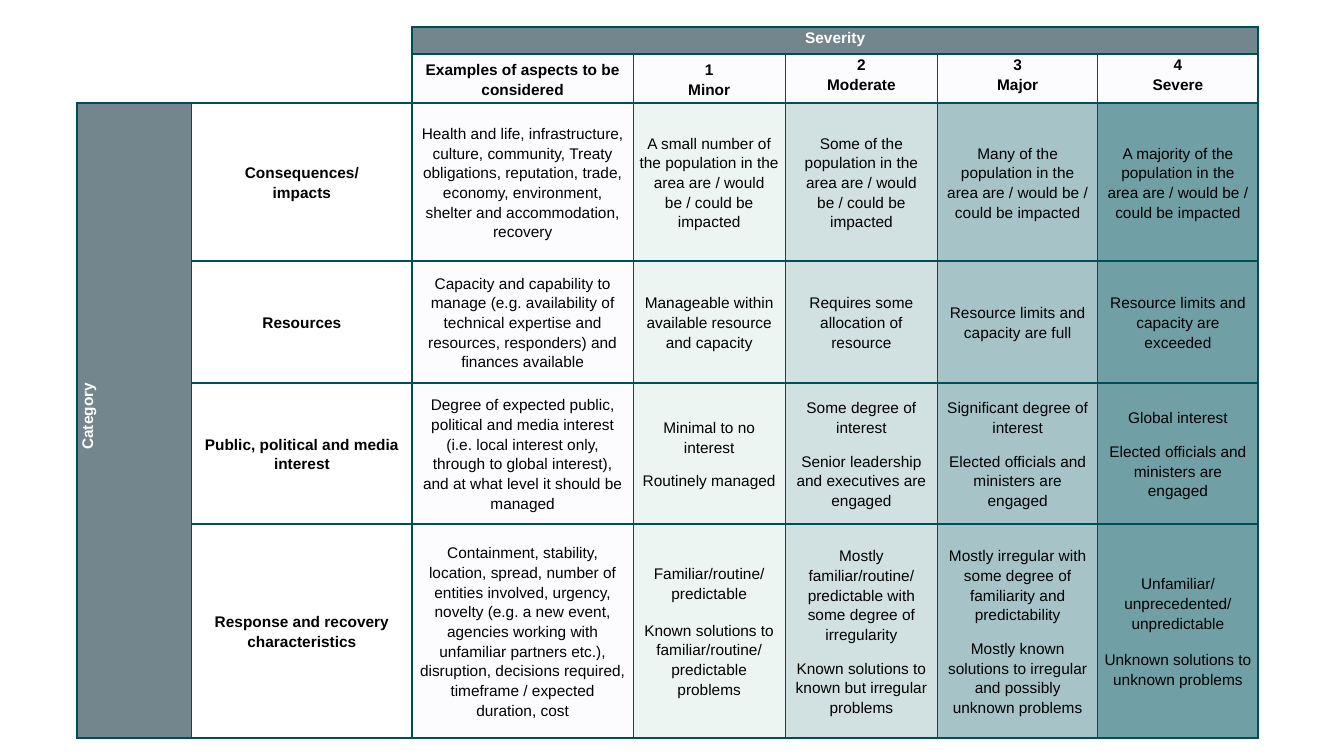
from lxml.etree import SubElement
from pptx import Presentation
from pptx.dml.color import RGBColor
from pptx.enum.text import MSO_ANCHOR as Anchor, PP_ALIGN as Align
from pptx.oxml.ns import qn
from pptx.util import Inches, Pt

BLACK, WHITE, TEAL, SLATE, PALE = "000000", "FFFFFF", "004F58", "73868E", "FCFCFF"
COLUMN_FILLS = [SLATE, WHITE, PALE, "EDF5F2", "D1E0E0", "A6C4C7", "70A0A5"]
COLUMN_WIDTHS = [1.14, 2.19, 2.19, 1.51, 1.51, 1.59, 1.59]
ROW_HEIGHTS = [0.27, 0.48, 1.57, 1.21, 1.4, 2.12]

# Edges drawn with the heavier rule, counted from the left and from the top
HEAVY_COLUMN_EDGES = {0, 1, 2, 7}
HEAVY_ROW_EDGES = {0, 1, 2, 6}

# Paragraphs (row, column, paragraph) followed by a smaller gap
TIGHT = {(1, 5, 0), (2, 4, 0), (2, 5, 0), (4, 3, 0), (4, 4, 0), (4, 5, 0),
         (4, 6, 0), (4, 6, 1), (5, 4, 0), (5, 5, 0)}

# "\n" starts a paragraph, "\v" breaks a line
MATRIX = [
    ["", "", "Severity", "", "", "", ""],
    ["", "", "Examples of aspects to be considered",
     "1\vMinor", "2\vModerate", "3\vMajor", "4\vSevere"],
    ["Category", "Consequences/\vimpacts",
     "Health and life, infrastructure, culture, community, Treaty obligations, "
     "reputation, trade, economy, environment, shelter and accommodation, recovery",
     "A small number of the population in the area are / would be / could be impacted",
     "Some of the population in the area are / would be / could be impacted",
     "Many of the population in the area are / would be / could be impacted",
     "A majority of the population in the area are / would be / could be impacted"],
    ["", "Resources",
     "Capacity and capability to manage (e.g. availability of technical expertise "
     "and resources, responders) and finances available",
     "Manageable within available resource and capacity",
     "Requires some allocation of resource",
     "Resource limits and capacity are full",
     "Resource limits and capacity are exceeded"],
    ["", "Public, political and media interest",
     "Degree of expected public, political and media interest (i.e. local interest "
     "only, through to global interest), and at what level it should be managed",
     "Minimal to no interest\nRoutinely managed",
     "Some degree of interest\nSenior leadership and executives are engaged",
     "Significant degree of interest\nElected officials and ministers are engaged",
     "Global interest\nElected officials and ministers are engaged"],
    ["", "Response and recovery characteristics",
     "Containment, stability, location, spread, number of entities involved, urgency, "
     "novelty (e.g. a new event, agencies working with unfamiliar partners etc.), "
     "disruption, decisions required, timeframe / expected duration, cost",
     "Familiar/routine/\vpredictable\n"
     "Known solutions to familiar/routine/ predictable problems",
     "Mostly familiar/routine/\vpredictable with some degree of irregularity\n"
     "Known solutions to known but irregular problems",
     "Mostly irregular with some degree of familiarity and predictability\n"
     "Mostly known solutions to irregular and possibly unknown problems",
     "Unfamiliar/\vunprecedented/\vunpredictable\n"
     "Unknown solutions to unknown problems"],
]


def color(value):
    return RGBColor.from_string(value)


def is_corner(row, column):
    return row < 2 and column < 2


def set_border(cell, side, points):
    line = SubElement(cell._tc.get_or_add_tcPr(), qn(f"a:ln{side}"), w=str(Pt(points)))
    if points:
        fill = SubElement(line, qn("a:solidFill"))
        SubElement(fill, qn("a:srgbClr"), val=TEAL)
    else:
        SubElement(line, qn("a:noFill"))


def set_borders(cell, row, column):
    right, bottom = column + cell.span_width, row + cell.span_height
    edges = {"L": column in HEAVY_COLUMN_EDGES, "R": right in HEAVY_COLUMN_EDGES,
             "T": row in HEAVY_ROW_EDGES, "B": bottom in HEAVY_ROW_EDGES}
    shown = set(edges)
    if is_corner(row, column):
        # The empty corner only meets the ruled cells beside and below it
        shown = {side for side, meets in (("R", right == 2), ("B", bottom == 2)) if meets}
    for side, heavy in edges.items():
        points = 1.5 if heavy else 1
        set_border(cell, side, points if side in shown else 0)


def set_fill(cell, row, column):
    if is_corner(row, column):
        cell.fill.background()
        return
    cell.fill.solid()
    header_fill = SLATE if row == 0 else PALE
    cell.fill.fore_color.rgb = color(header_fill if row < 2 else COLUMN_FILLS[column])


def write_text(cell, row, column):
    cell.margin_left = cell.margin_right = Inches(0.06)
    cell.margin_top = cell.margin_bottom = 0
    cell.text_frame.text = MATRIX[row][column]
    on_band = row == 0 or column == 0
    at_top = on_band or (row == 1 and column > 3)
    cell.vertical_anchor = Anchor.TOP if at_top else Anchor.MIDDLE
    for index, paragraph in enumerate(cell.text_frame.paragraphs):
        paragraph.alignment = Align.CENTER
        paragraph.line_spacing = 1.15
        paragraph.space_before = Pt(6)
        paragraph.space_after = Pt(4 if (row, column, index) in TIGHT else 6)
        for run in paragraph.runs:
            run.font.name = "Arial"
            run.font.size = Pt(11)
            run.font.bold = row < 2 or column < 2
            run.font.color.rgb = color(WHITE if on_band else BLACK)
        if not paragraph.runs:
            # Keep empty cells from stretching their row
            SubElement(paragraph._p, qn("a:endParaRPr"), sz="800")


def add_severity_matrix(slide):
    frame = slide.shapes.add_table(len(ROW_HEIGHTS), len(COLUMN_WIDTHS), Inches(0.76),
                                   Inches(0.27), Inches(11.72), Inches(7.05))
    table = frame.table
    table.first_row = table.horz_banding = False
    for column, width in zip(table.columns, COLUMN_WIDTHS):
        column.width = Inches(width)
    for row, height in zip(table.rows, ROW_HEIGHTS):
        row.height = Inches(height)

    # Severity spans its columns, Category spans its rows
    table.cell(0, 2).merge(table.cell(0, 6))
    table.cell(2, 0).merge(table.cell(5, 0))

    for row in range(len(ROW_HEIGHTS)):
        for column in range(len(COLUMN_WIDTHS)):
            cell = table.cell(row, column)
            write_text(cell, row, column)
            if not cell.is_spanned:
                set_borders(cell, row, column)
                set_fill(cell, row, column)

    # Category reads upwards
    category = table.cell(2, 0)
    category._tc.get_or_add_tcPr().set("vert", "vert270")
    category.text_frame.paragraphs[0]._p.get_or_add_pPr().set("marL", str(Inches(0.08)))


def main():
    deck = Presentation()
    deck.slide_width, deck.slide_height = Inches(13.33), Inches(7.5)
    slide = deck.slides.add_slide(deck.slide_layouts[6])
    add_severity_matrix(slide)
    deck.save("out.pptx")


if __name__ == "__main__":
    main()
